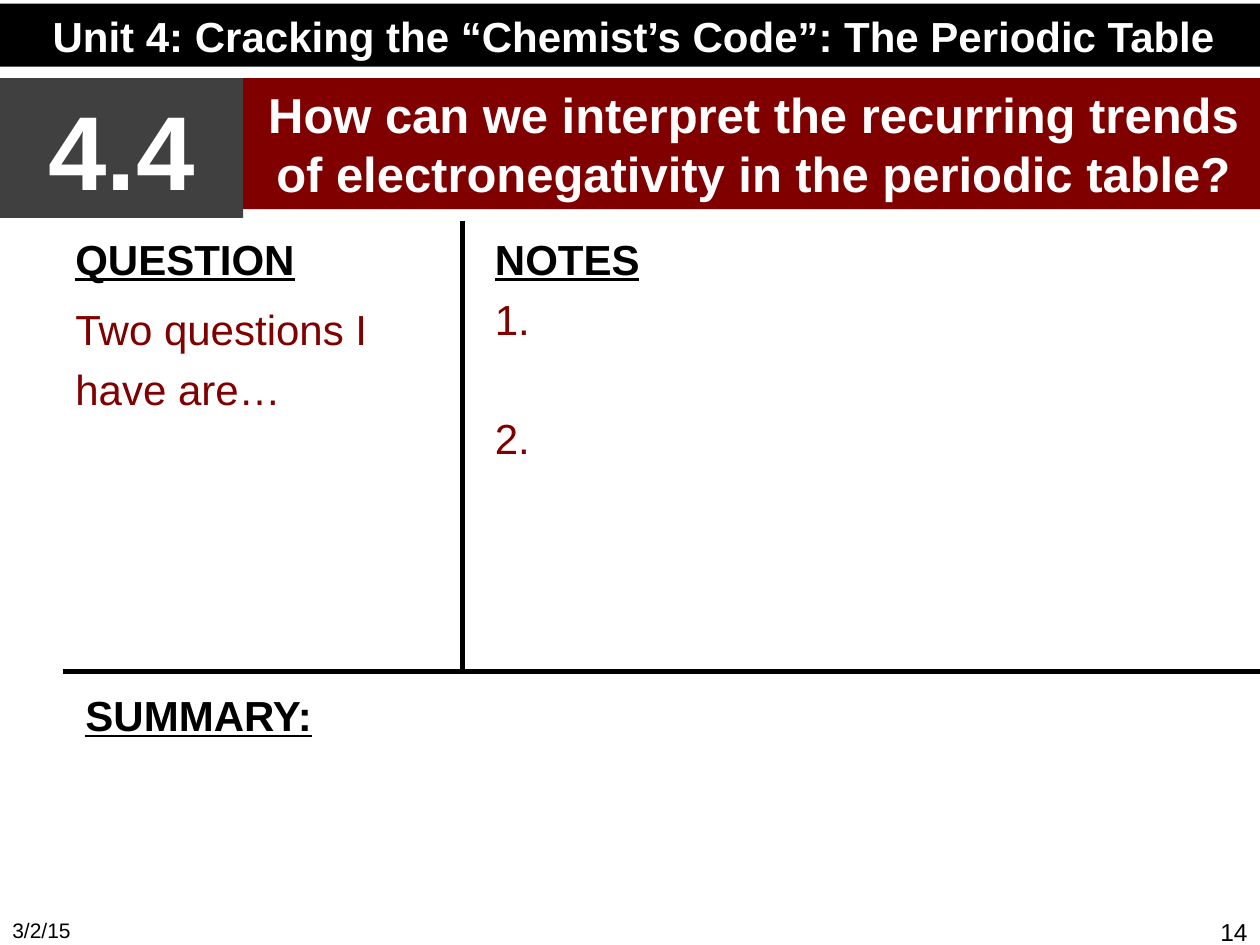
from lxml import etree
from pptx import Presentation
from pptx.dml.color import RGBColor
from pptx.enum import shapes, text
from pptx.oxml.ns import qn
from pptx.util import Inches, Pt

FONT = "Arial"
BLACK, WHITE, GRAY, MAROON = "000000", "FFFFFF", "404040", "800000"


def rgb(value):
    return RGBColor.from_string(value)


def place(sp, left, top, width, height):
    sp.left, sp.top = Inches(left), Inches(top)
    sp.width, sp.height = Inches(width), Inches(height)


def style(p, size, color, bold=False, underline=False):
    for r in p.runs:
        r.font.name = FONT
        r.font.size = Pt(size)
        r.font.color.rgb = rgb(color)
        r.font.bold = bold
        r.font.underline = underline


def fill_banner(sp, words, size, color):
    sp.fill.solid()
    sp.fill.fore_color.rgb = rgb(color)
    tf = sp.text_frame
    tf.word_wrap = True
    tf.auto_size = text.MSO_AUTO_SIZE.NONE
    tf.vertical_anchor = text.MSO_ANCHOR.MIDDLE
    tf.text = words
    p = tf.paragraphs[0]
    p.alignment = text.PP_ALIGN.CENTER
    style(p, size, WHITE, bold=True)


def add_banner(slide, box, words, size, color):
    sp = slide.shapes.add_shape(shapes.MSO_SHAPE.RECTANGLE, *map(Inches, box))
    sp.shadow.inherit = False
    sp.line.fill.background()
    fill_banner(sp, words, size, color)


def add_text(slide, box, words, size, align=text.PP_ALIGN.LEFT):
    tf = slide.shapes.add_textbox(*map(Inches, box)).text_frame
    tf.word_wrap = True
    tf.text = words
    p = tf.paragraphs[0]
    p.alignment = align
    style(p, size, BLACK)
    return tf


def add_section(slide, box, heading, entries=(), spacing=1.0):
    tf = add_text(slide, box, heading, 24)
    style(tf.paragraphs[0], 24, BLACK, bold=True, underline=True)
    for words, before in entries:
        p = tf.add_paragraph()
        p.text = words
        p.line_spacing = spacing
        p.space_before = Pt(before)
        style(p, 24, MAROON)


def add_rule(slide, x1, y1, x2, y2):
    line = slide.shapes.add_connector(
        shapes.MSO_CONNECTOR.STRAIGHT, *map(Inches, (x1, y1, x2, y2)))
    line.line.color.rgb = rgb(BLACK)
    line.line.width = Pt(3)
    etree.SubElement(line._element.spPr, qn("a:effectLst"))


def main():
    prs = Presentation()
    prs.slide_width, prs.slide_height = Inches(10), Inches(7.5)
    slide = prs.slides.add_slide(prs.slide_layouts[5])

    title = slide.shapes.title
    place(title, 1.93, 0.62, 8.1, 1.04)
    fill_banner(title, "How can we interpret the recurring trends of "
                "electronegativity in the periodic table?", 28, MAROON)
    add_banner(slide, (0, 0.03, 10.06, 0.5),
               "Unit 4: Cracking the “Chemist’s Code”: The Periodic Table",
               24, BLACK)
    add_banner(slide, (0, 0.62, 1.93, 1.11), "4.4", 60, GRAY)

    add_section(slide, (0.5, 1.8, 3.17, 3.45), "QUESTION",
                [("Two questions I have are…", 5.5)], spacing=1.2)
    add_section(slide, (3.83, 1.8, 6.17, 3.45), "NOTES",
                [("1.", 5.5), ("2.", 39.5)])
    add_section(slide, (0.58, 5.42, 9.42, 2.08), "SUMMARY:")

    add_rule(slide, 3.67, 1.75, 3.67, 5.33)
    add_rule(slide, 10, 5.33, 0.5, 5.33)

    add_text(slide, (0, 7.23, 2.33, 0.27), "3/2/15", 12)
    add_text(slide, (7.67, 7.23, 2.33, 0.27), "14", 14, text.PP_ALIGN.RIGHT)
    prs.save("out.pptx")


if __name__ == "__main__":
    main()
